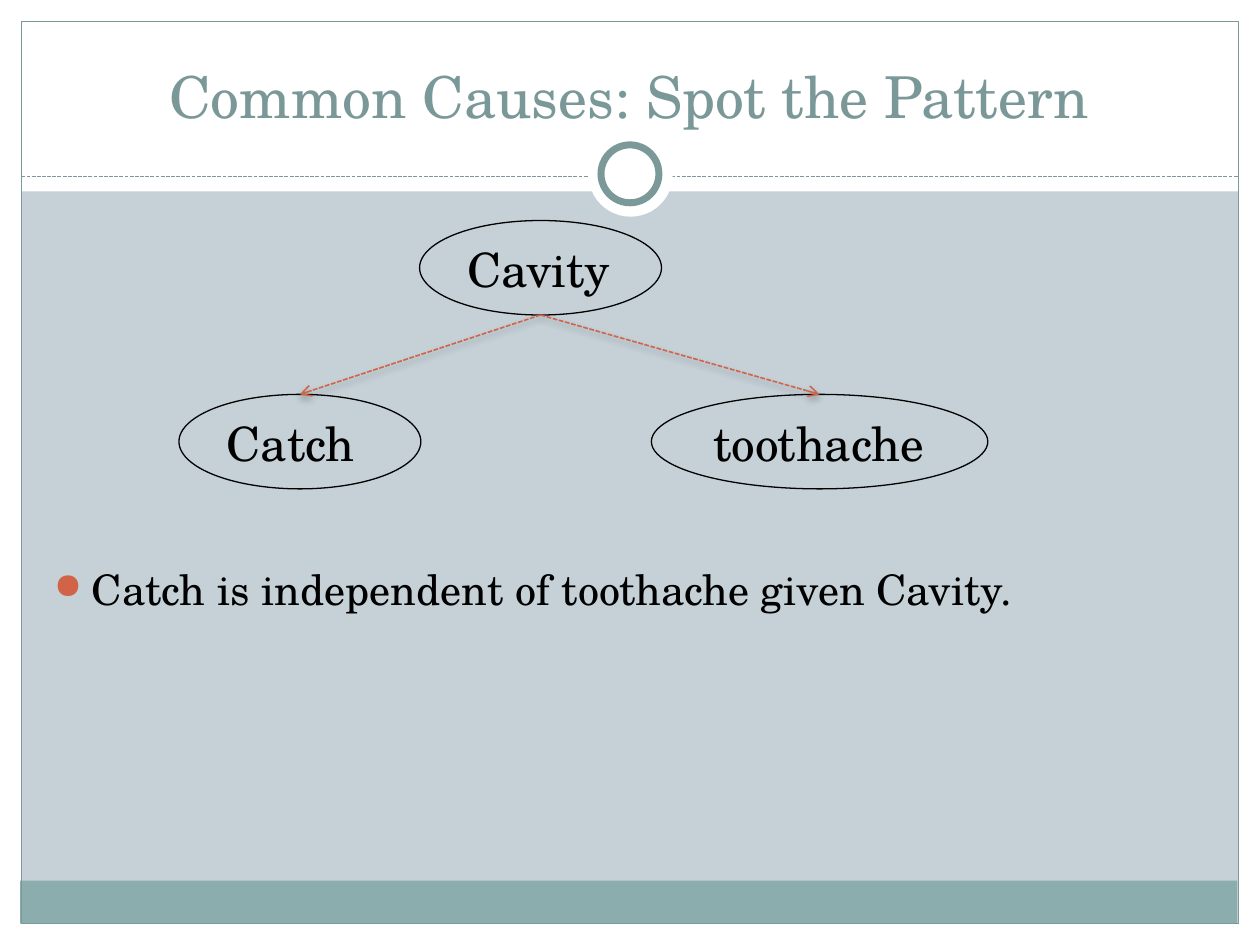
import pptx
import pptx.dml.color
import pptx.enum.dml
import pptx.enum.shapes
import pptx.enum.text
import pptx.oxml
import pptx.oxml.ns
import pptx.util
from pptx.util import Inches

SHAPES = pptx.enum.shapes.MSO_SHAPE
ANCHORS = pptx.enum.text.MSO_ANCHOR
ALIGNMENTS = pptx.enum.text.PP_ALIGN
NAMESPACE = pptx.oxml.ns.nsdecls("a")


def colour(value):
    return pptx.dml.color.RGBColor.from_string(value)


def apply(target, values):
    for name, value in values.items():
        setattr(target, name, value)


class SlideBuilder:
    font = "TeX Gyre Schola"
    white, black = "FFFFFF", "000000"
    teal, title_teal, band_teal = "7C999A", "7B9899", "8CADAE"
    accent, background = "D16349", "C5D1D7"

    def __init__(self, deck):
        self.page = deck.slides.add_slide(deck.slide_layouts[6])
        fill = self.page.background.fill
        fill.solid()
        fill.fore_color.rgb = colour(self.background)

    def shape(self, kind, area, fill=None, line=None, width=0.75):
        shape = self.page.shapes.add_shape(kind, *map(Inches, area))
        shape.shadow.inherit = False
        if fill:
            shape.fill.solid()
            shape.fill.fore_color.rgb = colour(fill)
        else:
            shape.fill.background()
        if line:
            shape.line.color.rgb = colour(line)
            shape.line.width = pptx.util.Pt(width)
        else:
            shape.line.fill.background()
        return shape

    def label(self, box, text, size, text_colour, align=ALIGNMENTS.LEFT,
              anchor=ANCHORS.TOP):
        apply(box.text_frame, {"word_wrap": True, "vertical_anchor": anchor})
        para = box.text_frame.paragraphs[0]
        para.alignment = align
        span = para.add_run()
        span.text = text
        apply(span.font, {"name": self.font, "size": pptx.util.Pt(size)})
        span.font.color.rgb = colour(text_colour)
        return para

    def text(self, area, *content, **layout):
        box = self.page.shapes.add_textbox(*map(Inches, area))
        return self.label(box, *content, **layout)

    def node(self, text, area):
        oval = self.shape(SHAPES.OVAL, area, line=self.black)
        oval.text_frame.margin_right = 0
        para = self.label(oval, text, 27, self.black)
        para.space_before = pptx.util.Pt(5.4)

    def bullet(self, area, text, size):
        para = self.text(area, text, size, self.black)
        para.space_before = pptx.util.Pt(size * 0.2)
        properties = para._p.get_or_add_pPr()
        properties.set("marL", str(Inches(0.3)))
        properties.set("indent", str(-Inches(0.3)))
        for markup in (
            f'<a:buClr {NAMESPACE}><a:srgbClr val="{self.accent}"/></a:buClr>',
            f'<a:buSzPct {NAMESPACE} val="85000"/>',
            f'<a:buChar {NAMESPACE} char="●"/>',
        ):
            properties.append(pptx.oxml.parse_xml(markup))

    def line(self, start, end, line_colour, width):
        line = self.page.shapes.add_connector(
            pptx.enum.shapes.MSO_CONNECTOR.STRAIGHT, *map(Inches, start + end))
        line.line.color.rgb = colour(line_colour)
        apply(line.line, {
            "width": pptx.util.Pt(width),
            "dash_style": pptx.enum.dml.MSO_LINE.SQUARE_DOT,
        })
        effects = pptx.oxml.parse_xml(f"<a:effectLst {NAMESPACE}/>")
        line._element.spPr.append(effects)
        return line, effects

    def arrow(self, start, end):
        line, effects = self.line(start, end, self.accent, 0.9)
        line._element.spPr.get_or_add_ln().append(pptx.oxml.parse_xml(
            f'<a:tailEnd {NAMESPACE} type="arrow"/>'))
        point = pptx.util.Pt(1)
        effects.append(pptx.oxml.parse_xml(
            f'<a:outerShdw {NAMESPACE} blurRad="{4 * point}" '
            f'dist="{2 * point}" dir="5400000" rotWithShape="0">'
            f'<a:srgbClr val="{self.black}"><a:alpha val="35000"/></a:srgbClr>'
            '</a:outerShdw>'))


def main():
    deck = pptx.Presentation()
    apply(deck, {"slide_width": Inches(10), "slide_height": Inches(7.5)})
    slide = SlideBuilder(deck)

    # White margins and header
    for area in ((0, 7.33, 10, 0.17), (0, 0, 10, 1.52),
                 (0, 0, 0.17, 7.5), (9.83, 0, 0.17, 7.5)):
        slide.shape(SHAPES.RECTANGLE, area, fill=slide.white)

    # Footer band, frame and header divider
    slide.shape(SHAPES.RECTANGLE, (0.16, 6.99, 9.66, 0.34), fill=slide.band_teal)
    slide.shape(SHAPES.RECTANGLE, (0.17, 0.17, 9.66, 7.16), line=slide.teal)
    slide.line((0.17, 1.4), (9.83, 1.4), slide.teal, 0.75)
    slide.shape(SHAPES.OVAL, (4.67, 1.05, 0.67, 0.67), fill=slide.white)
    slide.shape(SHAPES.OVAL, (4.77, 1.15, 0.46, 0.46), slide.white, slide.teal, 4)

    # Title
    slide.text((0.33, 0.25, 9.33, 0.83), "Common Causes: Spot the Pattern", 33,
               slide.title_teal, align=ALIGNMENTS.CENTER, anchor=ANCHORS.BOTTOM)

    # Cause and its effects
    cause = (3.33, 1.75, 1.92, 0.75)
    effects = {"Catch": (1.42, 3.13, 1.92, 0.75),
               "toothache": (5.17, 3.13, 2.67, 0.75)}
    slide.node("Cavity", cause)
    for name, area in effects.items():
        slide.node(name, area)
    left, top, width, height = cause
    cause_bottom = (left + width / 2, top + height)
    for left, top, width, height in effects.values():
        slide.arrow(cause_bottom, (left + width / 2, top))

    # Conclusion
    slide.bullet((0.33, 4.42, 9.3, 2.42),
                 "Catch is independent of toothache given Cavity.", 24)

    deck.save("out.pptx")


if __name__ == "__main__":
    main()
